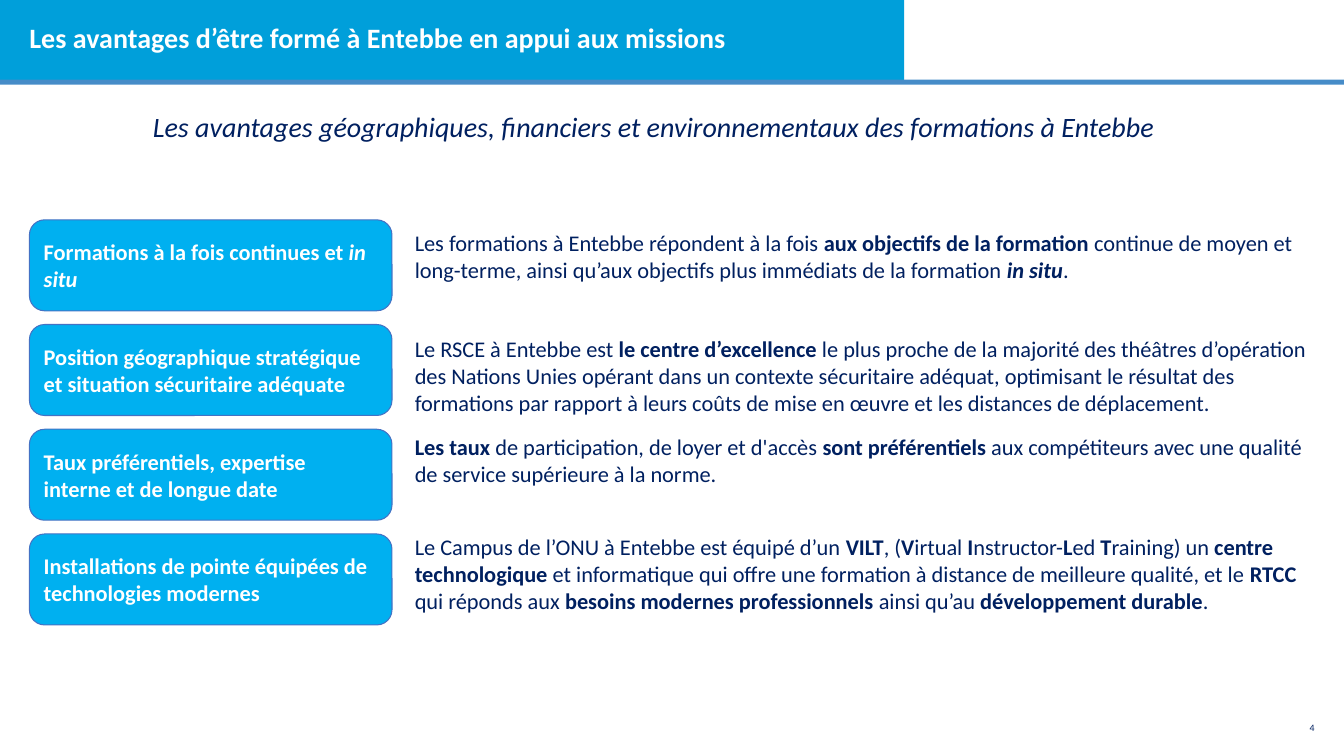
from pptx import Presentation
from pptx.dml.color import RGBColor
from pptx.enum import shapes, text
from pptx.util import Pt

NAVY = RGBColor(0x00, 0x20, 0x60)
WHITE = RGBColor(0xFF, 0xFF, 0xFF)
BANNER_BLUE = RGBColor(0x00, 0x9F, 0xDA)
RULE_BLUE = RGBColor(0x46, 0x8C, 0xC8)
LABEL_BLUE = RGBColor(0x00, 0xB0, 0xF0)
OUTLINE_BLUE = RGBColor(0x44, 0x72, 0xC4)

TITLE = "Les avantages d’être formé à Entebbe en appui aux missions"
SUBTITLE = "Les avantages géographiques, financiers et environnementaux des formations à Entebbe"
PAGE_NUMBER = "4"

# Label, top of the description, description; *bold* and _italic_ are marked.
ADVANTAGES = [
    ("*Formations à la fois continues et _in situ_*", 160,
     "Les formations à Entebbe répondent à la fois *aux objectifs de la formation *"
     "continue de moyen et long-terme, ainsi qu’aux objectifs plus immédiats "
     "de la formation *_in situ_*."),
    ("*Position géographique stratégique et situation sécuritaire adéquate*", 236,
     "Le RSCE à Entebbe est *le centre d’excellence *le plus proche de la majorité "
     "des théâtres d’opération des Nations Unies opérant dans un contexte sécuritaire "
     "adéquat, optimisant le résultat des formations par rapport à leurs coûts de mise "
     "en œuvre et les distances de déplacement."),
    ("*Taux préférentiels, expertise interne et de longue date*", 306,
     "*Les taux *de participation, de loyer et d'accès *sont préférentiels *"
     "aux compétiteurs avec une qualité de service supérieure à la norme."),
    ("*Installations de pointe équipées de technologies modernes*", 377.5,
     "Le Campus de l’ONU à Entebbe est équipé d’un *VILT*, (*V*irtual *I*nstructor-"
     "*L*ed *T*raining) un *centre technologique *et informatique qui offre une formation "
     "à distance de meilleure qualité, et le *RTCC* qui réponds aux "
     "*besoins modernes professionnels *ainsi qu’au *développement durable*."),
]

SLIDE_WIDTH, SLIDE_HEIGHT = 960, 540
MARGIN = 21
LABEL_TOP, LABEL_PITCH = 157, 74.8
LABEL_WIDTH, LABEL_HEIGHT = 259, 65
DESCRIPTION_LEFT, DESCRIPTION_WIDTH, DESCRIPTION_HEIGHT = 289.2, 655, 51


def write(shape, marked_text, size, color, align=text.PP_ALIGN.LEFT,
          anchor=text.MSO_ANCHOR.MIDDLE, insets=(7.2, 3.6, 7.2, 3.6)):
    """Fill the shape with one paragraph, turning *bold* and _italic_ marks into runs."""
    frame = shape.text_frame
    frame.word_wrap = True
    frame.vertical_anchor = anchor
    (frame.margin_left, frame.margin_top,
     frame.margin_right, frame.margin_bottom) = map(Pt, insets)
    paragraph = frame.paragraphs[0]
    paragraph.alignment = align
    paragraph.font.name = "Calibri"
    paragraph.font.size = Pt(size)
    paragraph.font.color.rgb = color
    for i, weight_part in enumerate(marked_text.split("*")):
        for j, part in enumerate(weight_part.split("_")):
            if part:
                run = paragraph.add_run()
                run.text = part
                run.font.bold = i % 2 == 1
                run.font.italic = j % 2 == 1
    return paragraph


def add_text(slide, box, *args, **options):
    return write(slide.shapes.add_textbox(*map(Pt, box)), *args, **options)


def add_block(slide, kind, box, fill):
    shape = slide.shapes.add_shape(kind, *map(Pt, box))
    shape.shadow.inherit = False
    shape.fill.solid()
    shape.fill.fore_color.rgb = fill
    shape.line.fill.background()
    return shape


def main():
    presentation = Presentation()
    presentation.slide_width, presentation.slide_height = Pt(SLIDE_WIDTH), Pt(SLIDE_HEIGHT)
    slide = presentation.slides.add_slide(presentation.slide_layouts[6])
    kinds = shapes.MSO_SHAPE

    add_text(slide, (918, 511, 21, 18), PAGE_NUMBER, 7, NAVY,
             align=text.PP_ALIGN.RIGHT, insets=(0, 0, 0, 0))
    add_block(slide, kinds.RECTANGLE, (0, 0, 645.8, 57.6), BANNER_BLUE)
    add_block(slide, kinds.RECTANGLE, (0, 56.8, SLIDE_WIDTH, 3.6), RULE_BLUE)
    title = add_text(slide, (MARGIN, 5, 702, 46.8), f"*{TITLE}*", 20, WHITE,
                     insets=(0, 3.6, 3.6, 3.6))
    title.line_spacing = 0.9
    add_text(slide, (54, 75, 826, 31.5), f"_{SUBTITLE}_", 20, NAVY,
             align=text.PP_ALIGN.CENTER, anchor=text.MSO_ANCHOR.TOP)

    for row, (label, description_top, description) in enumerate(ADVANTAGES):
        label_box = (MARGIN, LABEL_TOP + row * LABEL_PITCH, LABEL_WIDTH, LABEL_HEIGHT)
        shape = add_block(slide, kinds.ROUNDED_RECTANGLE, label_box, LABEL_BLUE)
        shape.line.color.rgb = OUTLINE_BLUE
        shape.line.width = Pt(0.75)
        write(shape, label, 16, WHITE)
        add_text(slide, (DESCRIPTION_LEFT, description_top, DESCRIPTION_WIDTH, DESCRIPTION_HEIGHT),
                 description, 16, NAVY, anchor=text.MSO_ANCHOR.TOP)

    presentation.save("out.pptx")


if __name__ == "__main__":
    main()
